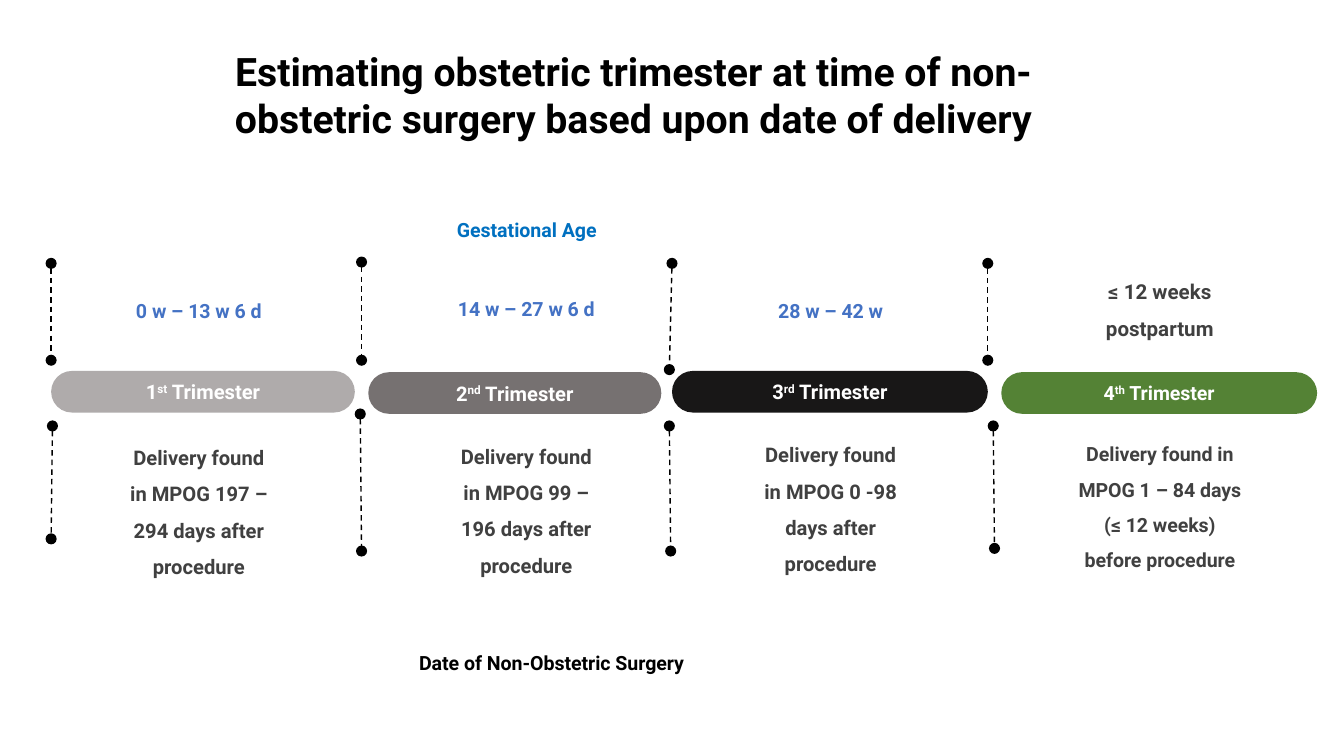
from lxml.etree import SubElement
from pptx import Presentation
from pptx.dml.color import RGBColor
from pptx.enum.dml import MSO_LINE
from pptx.enum.shapes import MSO_CONNECTOR, MSO_SHAPE
from pptx.enum.text import MSO_ANCHOR, MSO_AUTO_SIZE, PP_ALIGN
from pptx.oxml.ns import qn
from pptx.util import Pt

COLORS = {
    "black": "000000",
    "white": "FFFFFF",
    "body": "404040",
    "range": "4472C4",
    "heading": "0070C0",
    "first": "AFABAB",
    "second": "767171",
    "third": "181717",
    "fourth": "548235",
}
BAR_HEIGHT = 22.3
TRIMESTERS = [
    {
        "box": (27.4, 198.7, 162.7), "fill": "first",
        "label": ("1", "st"), "label_size": 10.8, "text_shift": -2.2,
        "range": (["0 w – 13 w 6 d"], -47.5, 10.5, "range"),
        "detail": (["Delivery found in MPOG 197 – 294 days after procedure"], 31, 10.8, 90.7),
        "markers": [(0, -57.6, 0, -5.7), (0.7, 29.5, 0, 90)],
    },
    {
        "box": (197.3, 199.4, 157), "fill": "second",
        "label": ("2", "nd"), "label_size": 10.8, "text_shift": 6.2,
        "range": (["14 w – 27 w 6 d"], -48.9, 10.5, "range"),
        "detail": (["Delivery found in MPOG 99 – 196 days after procedure"], 29.6, 10.8, 90.7),
        "markers": [(-3.6, -59, -3.6, -6.4), (-4.3, 22.4, -3.6, 95.8)],
    },
    {
        "box": (360, 198.7, 169.2), "fill": "third",
        "label": ("3", "rd"), "label_size": 10.8, "text_shift": 0.4,
        "range": (["28 w – 42 w"], -47.5, 10.5, "range"),
        "detail": (["Delivery found in MPOG 0 -98 days after procedure"], 29.5, 10.8, 90.7),
        "markers": [(0, -57.6, -1.4, -0.7), (-1.4, 29.5, -0.7, 96.5)],
    },
    {
        "box": (536.4, 199.4, 169.2), "fill": "fourth",
        "label": ("4", "th"), "label_size": 10.5, "text_shift": 0.4,
        "range": (["≤ 12 weeks postpartum"], -59, 11, "body"),
        "detail": (["Delivery found in MPOG 1 – 84 days", "(≤ 12 weeks)", "before procedure"],
                   28.8, 10.5, 116.6),
        "markers": [(-7.2, -58.3, -7.2, -6.4), (-4.3, 28.8, -3.6, 94.4)],
    },
]


def rgb(name):
    """Return the named colour."""
    return RGBColor.from_string(COLORS[name])


def format_font(font, size, color):
    """Apply the bold slide font in a size and colour."""
    values = {"name": "Roboto", "size": Pt(size), "bold": True}
    for attribute, value in values.items():
        setattr(font, attribute, value)
    font.color.rgb = rgb(color)


def add_text(slide, box, lines, size, color):
    """Add a centred text box with one paragraph per line."""
    frame = slide.shapes.add_textbox(*map(Pt, box)).text_frame
    values = {
        "word_wrap": True,
        "margin_left": Pt(5), "margin_right": Pt(5),
        "margin_top": Pt(2.5), "margin_bottom": Pt(2.5),
        "text": "\n".join(lines),
    }
    for attribute, value in values.items():
        setattr(frame, attribute, value)
    for paragraph in frame.paragraphs:
        paragraph.alignment = PP_ALIGN.CENTER
        paragraph.line_spacing = 1.5
        format_font(paragraph.runs[0].font, size, color)


def add_marker(slide, start, end):
    """Add a dashed line with a dot at each end."""
    connector = slide.shapes.add_connector(MSO_CONNECTOR.STRAIGHT, *map(Pt, start + end))
    connector.line.color.rgb = rgb("black")
    connector.line.width = Pt(0.75)
    connector.line.dash_style = MSO_LINE.DASH
    properties = connector._element.spPr
    for tag in ("a:headEnd", "a:tailEnd"):
        SubElement(properties.find(qn("a:ln")), qn(tag), type="oval")
    SubElement(properties, qn("a:effectLst"))


def add_bar(slide, box, fill, label, size):
    """Add a pill-shaped bar with an ordinal trimester label."""
    shape = slide.shapes.add_shape(MSO_SHAPE.ROUNDED_RECTANGLE, *map(Pt, box))
    shape.adjustments[0] = 0.5
    shape.shadow.inherit = False
    shape.fill.solid()
    shape.fill.fore_color.rgb = rgb(fill)
    shape.line.fill.background()
    shape.text_frame.vertical_anchor = MSO_ANCHOR.MIDDLE
    paragraph = shape.text_frame.paragraphs[0]
    paragraph.alignment = PP_ALIGN.CENTER
    number, suffix = label
    for text, baseline in ((number, "0"), (suffix, "30000"), (" Trimester", "0")):
        run = paragraph.add_run()
        run.text = text
        format_font(run.font, size, "white")
        run._r.get_or_add_rPr().set("baseline", baseline)


def add_trimester(slide, trimester):
    """Place a bar, its two texts and its markers relative to the bar's box."""
    left, top, width = trimester["box"]
    add_bar(slide, (left, top, width, BAR_HEIGHT), trimester["fill"],
            trimester["label"], trimester["label_size"])
    for x1, y1, x2, y2 in trimester["markers"]:
        add_marker(slide, (left + x1, top + y1), (left + x2, top + y2))
    center = left + width / 2 + trimester["text_shift"]
    lines, offset, size, color = trimester["range"]
    add_text(slide, (center - 45.35, top + offset, 90.7, BAR_HEIGHT), lines, size, color)
    lines, offset, size, text_width = trimester["detail"]
    add_text(slide, (center - text_width / 2, top + offset, text_width, 81), lines, size, "body")


def add_title(slide, box):
    """Move and format the title placeholder."""
    title = slide.shapes.title
    for attribute, value in zip(("left", "top", "width", "height"), box):
        setattr(title, attribute, Pt(value))
    frame = title.text_frame
    values = {
        "text": "Estimating obstetric trimester at time of non-obstetric surgery "
                "based upon date of delivery",
        "word_wrap": True,
        "auto_size": MSO_AUTO_SIZE.NONE,
        "vertical_anchor": MSO_ANCHOR.TOP,
    }
    for attribute, value in values.items():
        setattr(frame, attribute, value)
    paragraph = frame.paragraphs[0]
    paragraph.alignment = PP_ALIGN.CENTER
    paragraph.line_spacing = 1.0
    format_font(paragraph.runs[0].font, 21, "black")


def main():
    """Build and save the trimester timeline."""
    presentation = Presentation()
    presentation.slide_width, presentation.slide_height = Pt(720), Pt(405)
    slide = presentation.slides.add_slide(presentation.slide_layouts[5])
    add_title(slide, (77.8, 21.6, 523.4, 58.3))
    add_text(slide, (236.9, 108, 90.7, 21.6), ["Gestational Age"], 10.5, "heading")
    for trimester in TRIMESTERS:
        add_trimester(slide, trimester)
    add_text(slide, (151.9, 339.8, 287.3, 21.6), ["Date of Non-Obstetric Surgery"], 10.5, "black")
    presentation.save("out.pptx")


if __name__ == "__main__":
    main()
